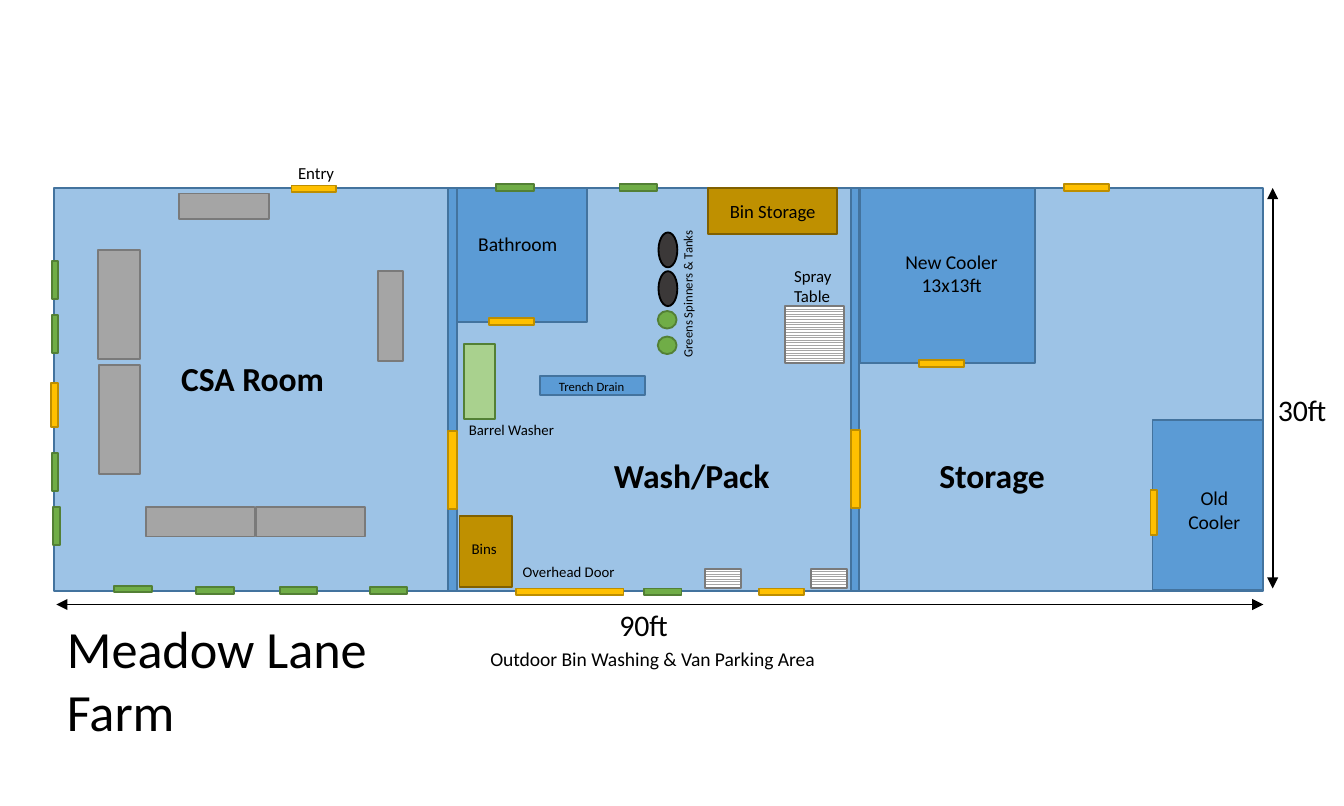
from lxml import etree
from pptx import Presentation
from pptx.dml.color import RGBColor
from pptx.enum.dml import MSO_PATTERN
from pptx.enum.shapes import MSO_CONNECTOR, MSO_SHAPE
from pptx.enum.text import MSO_ANCHOR, MSO_AUTO_SIZE, PP_ALIGN
from pptx.oxml.ns import qn
from pptx.util import Pt

RECT = MSO_SHAPE.RECTANGLE
OVAL = MSO_SHAPE.OVAL
STRAIGHT = MSO_CONNECTOR.STRAIGHT
SLATS = MSO_PATTERN.NARROW_HORIZONTAL
MIDDLE = MSO_ANCHOR.MIDDLE
LEFT, CENTER = PP_ALIGN.LEFT, PP_ALIGN.CENTER
GROW = MSO_AUTO_SIZE.SHAPE_TO_FIT_TEXT

BLACK = RGBColor(0x00, 0x00, 0x00)
WHITE = RGBColor(0xFF, 0xFF, 0xFF)
SKY = RGBColor(0x9D, 0xC3, 0xE6)
BLUE = RGBColor(0x5B, 0x9B, 0xD5)
NAVY = RGBColor(0x43, 0x73, 0x9E)
GOLD = RGBColor(0xFF, 0xC0, 0x00)
AMBER = RGBColor(0xBD, 0x8E, 0x00)
GREEN = RGBColor(0x70, 0xAD, 0x47)
FOREST = RGBColor(0x53, 0x80, 0x35)
LIME = RGBColor(0xA9, 0xD1, 0x8E)
GREY = RGBColor(0xA5, 0xA5, 0xA5)
STEEL = RGBColor(0x7A, 0x7A, 0x7A)
COAL = RGBColor(0x3B, 0x38, 0x38)
OCHRE = RGBColor(0xBF, 0x90, 0x00)
BROWN = RGBColor(0x80, 0x60, 0x00)


class Plan:
    def __init__(self, slide, font):
        self.slide = slide
        self.font = font

    def words(self, frame, text, size, align=LEFT, bold=False):
        for i, line in enumerate(text.split("\n")):
            para = frame.paragraphs[0] if i == 0 else frame.add_paragraph()
            para.alignment = align
            run = para.add_run()
            run.text = line
            run.font.name = self.font
            run.font.size = Pt(size)
            run.font.bold = bold
            run.font.color.rgb = BLACK

    def block(self, x, y, w, h, fill, edge, kind=RECT):
        shape = self.slide.shapes.add_shape(kind, Pt(x), Pt(y), Pt(w), Pt(h))
        shape.shadow.inherit = False
        shape.fill.solid()
        shape.fill.fore_color.rgb = fill
        shape.line.color.rgb = edge
        shape.line.width = Pt(1)
        return shape

    def grate(self, x, y, w, h):
        fill = self.block(x, y, w, h, GREY, STEEL).fill
        fill.patterned()
        fill.pattern = SLATS
        fill.fore_color.rgb = GREY
        fill.back_color.rgb = WHITE

    def label(self, x, y, w, h, text, size, align=LEFT, bold=False, turn=0, wrap=False):
        box = self.slide.shapes.add_textbox(Pt(x), Pt(y), Pt(w), Pt(h))
        box.rotation = turn
        box.text_frame.word_wrap = wrap
        box.text_frame.auto_size = GROW
        self.words(box.text_frame, text, size, align, bold)

    def arrow(self, x1, y1, x2, y2):
        line = self.slide.shapes.add_connector(STRAIGHT, Pt(x1), Pt(y1), Pt(x2), Pt(y2))
        line.line.color.rgb = BLACK
        line.line.width = Pt(1)
        props = line._element.spPr
        for end in ("a:headEnd", "a:tailEnd"):
            etree.SubElement(props.find(qn("a:ln")), qn(end), type="triangle")
        etree.SubElement(props, qn("a:effectLst"))


def main():
    deck = Presentation()
    deck.slide_width, deck.slide_height = Pt(720), Pt(432)
    plan = Plan(deck.slides.add_slide(deck.slide_layouts[6]), "Calibri")

    top = 100.8
    plan.block(28.8, top, 648, 216, SKY, NAVY)
    rooms = [(460.8, top, 93.6, 93.6), (242.6, top, 72, 72), (617.4, 225, 59, 91.4)]
    walls = [(239.8, top, 5, 216), (455.8, top, 4.6, 216)]
    trench = (289.4, 201.6, 56.2, 10.1)
    for area in [*rooms, *walls, trench]:
        plan.block(*area, BLUE, NAVY)

    thin = 3.6
    wide = 23.8
    for x, y in [(492.5, 193), (156.2, 99.4), (262.1, 170.6), (406.8, 315.4), (570.2, 98.6)]:
        plan.block(x, y, wide, thin, GOLD, AMBER)
    for x, y in [(616.3, 262.8), (27.4, 205.2)]:
        plan.block(x, y, thin, wide, GOLD, AMBER)
    for x, y in [(239.8, 231.1), (455.8, 230.4)]:
        plan.block(x, y, 5, 41.8, GOLD, AMBER)
    plan.block(276.5, 315.4, 57.6, thin, GOLD, AMBER)

    pane = 20.2
    for x, y in [(331.9, 98.6), (265.7, 98.6), (61.2, 313.9), (105.1, 314.6),
                 (149.8, 314.6), (198, 314.6), (344.9, 315.4)]:
        plan.block(x, y, pane, thin, GREEN, FOREST)
    for x, y in [(27.7, 140), (27.7, 168.8), (27.7, 243), (28.4, 271.8)]:
        plan.block(x, y, thin, pane, GREEN, FOREST)

    for bench in [(78.1, 271.8, 58.3, 15.8), (137.2, 271.8, 58.3, 15.8),
                  (53.3, 195.8, 21.6, 58.3), (52.6, 133.9, 22.3, 58.3),
                  (95.8, 103.7, 48.2, 13.7), (202.3, 145.4, 13.7, 48.2)]:
        plan.block(*bench, GREY, STEEL)

    for grate in [(434.5, 304.9, 19.4, 10.1), (377.7, 304.9, 19.4, 10.1),
                  (420.5, 164.2, 31.7, 30.2)]:
        plan.grate(*grate)

    plan.block(248.4, 184.3, 16.6, 40.3, LIME, FOREST)
    for y in (124.6, 145.4):
        plan.block(352.8, y, 10.1, 18.7, COAL, BLACK, OVAL)
    for y in (166.7, 180.4):
        plan.block(352.4, y, 10.1, 9.4, GREEN, FOREST, OVAL)

    store = plan.block(379.4, top, 69.1, 24.5, OCHRE, BROWN)
    store.text_frame.vertical_anchor = MIDDLE
    plan.words(store.text_frame, "Bin Storage", 10, CENTER)
    plan.block(246.2, 276.5, 28.1, 38.2, OCHRE, BROWN)

    plan.arrow(30.2, 324, 676.8, 324)
    plan.arrow(681.8, top, 681.8, 315.4)

    for x, y, w, text in [(90, 188.6, 91.4, "CSA Room"), (321.8, 240.5, 98.6, "Wash/Pack"),
                          (496.1, 240.5, 71.3, "Storage")]:
        plan.label(x, y, w, 28.8, text, 18, bold=True)
    for x, y, text in [(677.5, 206.6, "30ft"), (324.7, 321.8, "90ft")]:
        plan.label(x, y, 41, 26.6, text, 16)
    plan.label(28.8, 326.9, 204.5, 41, "Meadow Lane Farm", 28)
    plan.label(477.4, 130.3, 64.8, 32.4, "New Cooler\n13x13ft", 10.5, CENTER)
    plan.label(629.3, 257, 42.5, 32.4, "Old\nCooler", 10.5, CENTER)
    plan.label(249.1, 121, 57.6, 20.2, "Bathroom", 10.5)
    plan.label(255.6, 343.4, 192.2, 20.2, "Outdoor Bin Washing & Van Parking Area", 10.5)
    plan.label(152.6, 83.5, 33.8, 18, "Entry", 9)
    plan.label(418.3, 139, 35.3, 28.8, "Spray\nTable", 9)
    plan.label(272.9, 298.1, 64.1, 16.6, "Overhead Door", 7.9)
    plan.label(244.1, 221.8, 60.5, 16.6, "Barrel Washer", 7.9)
    plan.label(245.5, 285.8, 35.3, 17.3, "Bins", 8, wrap=True)
    plan.label(292.3, 199.4, 49.7, 15.1, "Trench Drain", 6.8)
    plan.label(326.9, 149.8, 82.8, 15.1, "Greens Spinners & Tanks", 6.8, turn=270)

    deck.save("out.pptx")


if __name__ == "__main__":
    main()
